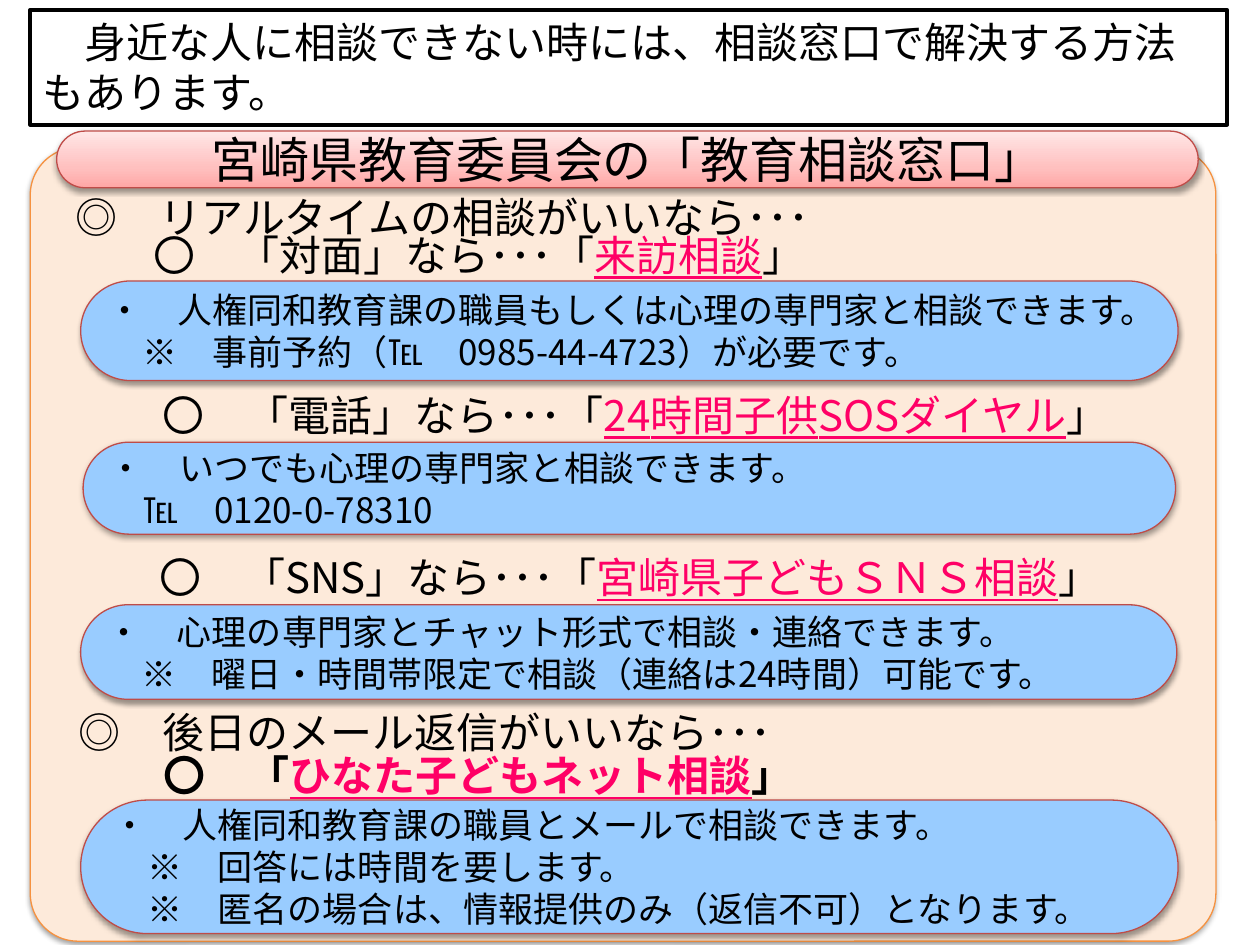
from lxml.etree import SubElement
from pptx import Presentation
from pptx.dml.color import RGBColor
from pptx.enum.shapes import MSO_SHAPE as Shape
from pptx.enum.text import MSO_ANCHOR as Anchor, PP_ALIGN as Align
from pptx.oxml.ns import qn
from pptx.util import Inches, Pt

FONT = "Noto Sans CJK JP"
BLACK = RGBColor(0x00, 0x00, 0x00)
PINK = RGBColor(0xFF, 0x00, 0x66)
CREAM = RGBColor(0xFD, 0xEA, 0xDA)
ORANGE = RGBColor(0xF6, 0x92, 0x40)
BLUE = RGBColor(0x99, 0xCC, 0xFF)
RED = RGBColor(0xBF, 0x4C, 0x48)
BANNER_STOPS = [(0, RGBColor(0xFF, 0xA6, 0xA5)),
                (35, RGBColor(0xFF, 0xC0, 0xBF)),
                (100, RGBColor(0xFF, 0xE7, 0xE7))]
HEADING_HEIGHT = 0.5

# Headings: box left, top, width; text before, linked name, text after; bold
HEADINGS = [
    ((-0.28, 1.47, 7.58), ("◎　リアルタイムの相談がいいなら･･･", "", ""), False),
    ((-0.54, 1.77, 8.68), ("〇　「対面」なら･･･「", "来訪相談", "」"), False),
    ((0.4, 3.04, 9.29), ("〇　「電話」なら･･･「", "24時間子供SOSダイヤル", "」"), False),
    ((0.38, 4.33, 9.24), ("〇　「SNS」なら･･･「", "宮崎県子どもＳＮＳ相談", "」"), False),
    ((0, 5.56, 6.74), ("◎　後日のメール返信がいいなら･･･", "", ""), False),
    ((-0.54, 5.9, 8.68), ("〇　「", "ひなた子どもネット相談", "」"), True),
]

# Blue details: box, lines
DETAILS = [
    ((0.64, 2.23, 8.71, 0.79),
     ["・　人権同和教育課の職員もしくは心理の専門家と相談できます。",
      "　※　事前予約（℡　0985-44-4723）が必要です。"]),
    ((0.66, 3.51, 8.67, 0.73),
     ["・　いつでも心理の専門家と相談できます。",
      "　℡　0120-0-78310"]),
    ((0.64, 4.8, 8.7, 0.75),
     ["・　心理の専門家とチャット形式で相談・連絡できます。",
      "　※　曜日・時間帯限定で相談（連絡は24時間）可能です。"]),
    ((0.64, 6.35, 8.71, 1.06),
     ["・　人権同和教育課の職員とメールで相談できます。",
      "　※　回答には時間を要します。",
      "　※　匿名の場合は、情報提供のみ（返信不可）となります。"]),
]


def style_paragraph(paragraph, size, align, bold=False):
    paragraph.alignment = align
    font = paragraph.font
    font.size, font.bold, font.name = Pt(size), bold, FONT
    font.color.rgb = BLACK
    # East Asian typeface
    properties = paragraph._p.pPr.find(qn("a:defRPr"))
    SubElement(properties, qn("a:ea"), typeface=FONT)


def write_lines(shape, lines, size, align=Align.LEFT, anchor=Anchor.MIDDLE):
    frame = shape.text_frame
    frame.word_wrap = True
    frame.vertical_anchor = anchor
    frame.text = "\n".join(lines)
    for paragraph in frame.paragraphs:
        style_paragraph(paragraph, size, align)


def add_shadow(shape):
    effects = shape._element.spPr.find(qn("a:effectLst"))
    shadow = SubElement(effects, qn("a:outerShdw"), blurRad=str(Pt(3.1)),
                        dist=str(Pt(1.6)), dir="5400000", rotWithShape="0")
    color = SubElement(shadow, qn("a:srgbClr"), val=str(BLACK))
    SubElement(color, qn("a:alpha"), val="38000")


def add_box(slide, box, line, width=0.75, fill=None, rounding=None):
    """Draw a plain frame, or a shadowed rounded box if rounding is given."""
    kind = Shape.RECTANGLE if rounding is None else Shape.ROUNDED_RECTANGLE
    shape = slide.shapes.add_shape(kind, *map(Inches, box))
    if fill is None:
        shape.fill.background()
    else:
        shape.fill.solid()
        shape.fill.fore_color.rgb = fill
    shape.line.color.rgb = line
    shape.line.width = Pt(width)
    shape.shadow.inherit = False
    if rounding is not None:
        shape.adjustments[0] = rounding
        add_shadow(shape)
    return shape


def add_notice(slide, box):
    shape = add_box(slide, box, BLACK, width=2.25)
    write_lines(shape, ["　身近な人に相談できない時には、相談窓口で解決する方法もあります。"],
                24, anchor=Anchor.TOP)


def add_banner(slide, box):
    shape = add_box(slide, box, RED, fill=CREAM, rounding=0.5)
    shape.fill.gradient()
    shape.fill.gradient_angle = 90
    stops = shape._element.spPr.find(qn("a:gradFill")).find(qn("a:gsLst"))
    for stop in list(stops):
        stops.remove(stop)
    for position, color in BANNER_STOPS:
        stop = SubElement(stops, qn("a:gs"), pos=str(position * 1000))
        SubElement(stop, qn("a:srgbClr"), val=str(color))
    write_lines(shape, ["宮崎県教育委員会の「教育相談窓口」"], 28, Align.CENTER)


def add_heading(slide, box, parts, bold):
    textbox = slide.shapes.add_textbox(*map(Inches, (*box, HEADING_HEIGHT)))
    textbox.text_frame.word_wrap = True
    paragraph = textbox.text_frame.paragraphs[0]
    style_paragraph(paragraph, 24, Align.CENTER, bold)
    before, name, after = parts
    paragraph.add_run().text = before
    if name:
        run = paragraph.add_run()
        run.text = name
        run.font.color.rgb = PINK
        run.font.underline = True
        paragraph.add_run().text = after


def add_detail(slide, box, lines):
    shape = add_box(slide, box, RED, fill=BLUE, rounding=0.5)
    write_lines(shape, lines, 20)


def main():
    presentation = Presentation()
    presentation.slide_width = Inches(10)
    presentation.slide_height = Inches(7.5)
    slide = presentation.slides.add_slide(presentation.slide_layouts[6])

    add_notice(slide, (0.24, 0.08, 9.5, 0.91))
    # Background panel and its title
    add_box(slide, (0.24, 1.17, 9.41, 6.3), ORANGE, fill=CREAM, rounding=0.06)
    add_banner(slide, (0.45, 1.04, 9.06, 0.45))
    # Consultation options
    for box, lines in DETAILS:
        add_detail(slide, box, lines)
    for box, parts, bold in HEADINGS:
        add_heading(slide, box, parts, bold)

    presentation.save("out.pptx")


if __name__ == "__main__":
    main()
